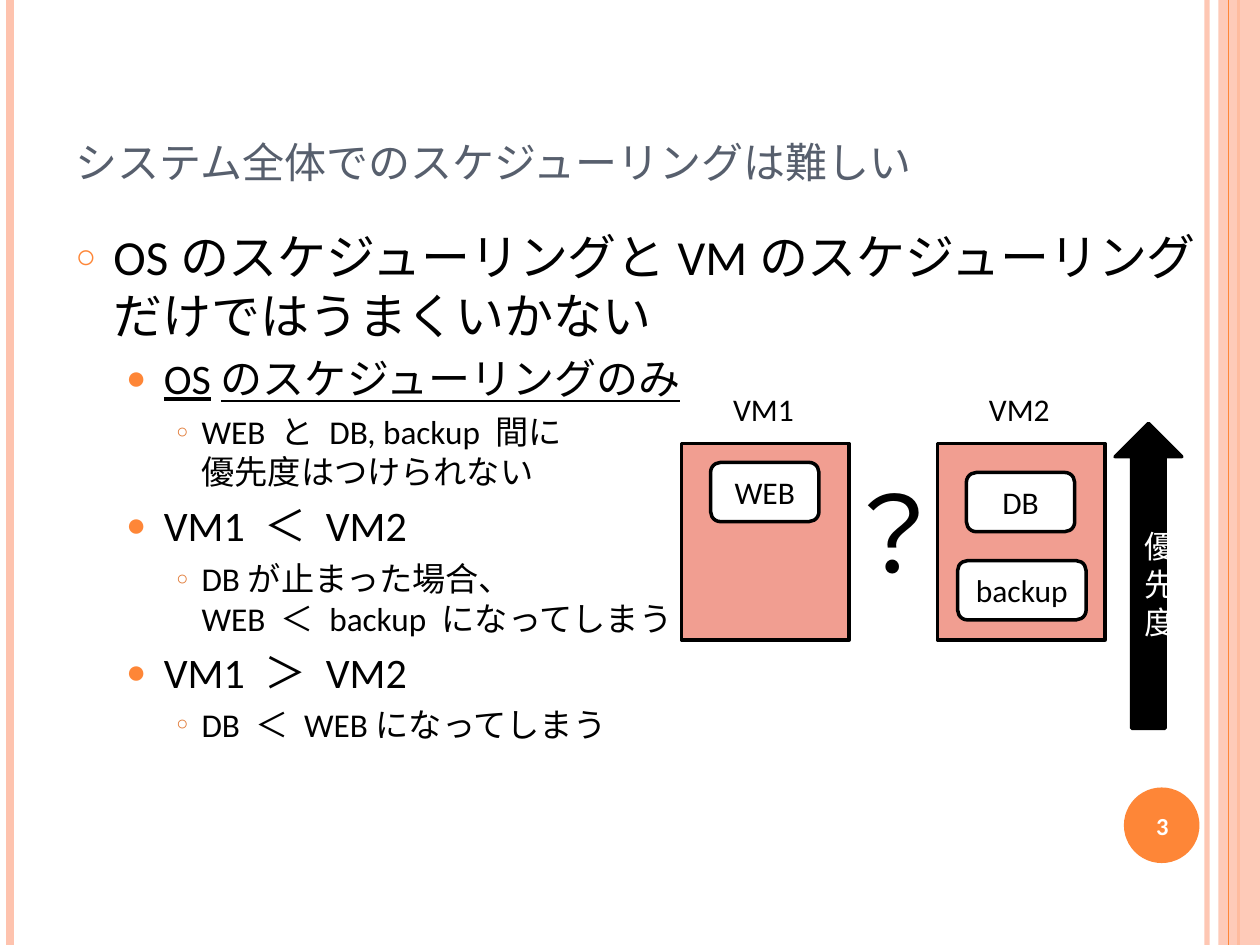
from dataclasses import dataclass

from lxml import etree
from pptx import Presentation
from pptx import util as u
from pptx.dml import color
from pptx.enum import shapes, text
from pptx.oxml import ns

LATIN, JAPANESE = "Calibri", "Noto Sans CJK JP"
ORANGE, PEACH, SALMON = "FE8637", "FEC3AE", "F19E91"
BLACK, WHITE = "000000", "FFFFFF"
SHAPE = shapes.MSO_SHAPE


@dataclass
class Stripe:
    x: float
    colour: str
    width: float
    opacity: int = 100


@dataclass
class Level:
    size: float
    margin: float
    indent: float
    bullet: str
    bullet_colour: str
    bullet_percent: int


@dataclass
class Item:
    level: int
    wording: str
    underline: bool = False


@dataclass
class Process:
    name: str
    offset_x: float
    offset_y: float
    width: float


@dataclass
class Machine:
    name: str
    x: float
    label_x: float
    label_width: float
    processes: list[Process]


STRIPES = [Stripe(9.58, PEACH, 3, 93), Stripe(0.08, PEACH, 4.5), Stripe(9.83, ORANGE, 1.5)]
LEVELS = [
    Level(28, 0.3, -0.3, "○", ORANGE, 70),
    Level(24, 0.7, -0.3, "●", ORANGE, 80),
    Level(19, 1, -0.2, "○", "E07631", 60),
]
ITEMS = [
    Item(0, "OSのスケジューリングとVMのスケジューリングだけではうまくいかない"),
    Item(1, "OSのスケジューリングのみ", underline=True),
    Item(2, "WEB と DB, backup 間に\n優先度はつけられない"),
    Item(1, "VM1 ＜ VM2"),
    Item(2, "DBが止まった場合、\nWEB ＜ backup になってしまう"),
    Item(1, "VM1 ＞ VM2"),
    Item(2, "DB ＜ WEBになってしまう"),
]
MACHINES = [
    Machine("VM2", 7.44, 7.75, 0.78,
            [Process("DB", 0.23, 0.23, 0.86), Process("backup", 0.16, 0.93, 1.02)]),
    Machine("VM1", 5.41, 5.72, 0.86, [Process("WEB", 0.23, 0.15, 0.86)]),
]
MACHINE_TOP = 3.52


def paint(fill, colour: str, opacity: int = 100) -> None:
    fill.solid()
    fill.fore_color.rgb = color.RGBColor.from_string(colour)
    if opacity < 100:
        tint = fill._xPr.find(".//" + ns.qn("a:srgbClr"))
        etree.SubElement(tint, ns.qn("a:alpha"), val=str(opacity * 1000))


def place(item, x: float, y: float, width: float, height: float) -> None:
    item.left, item.top = u.Inches(x), u.Inches(y)
    item.width, item.height = u.Inches(width), u.Inches(height)


def add_span(para, wording: str, size: float, colour: str = BLACK, font: str = LATIN):
    span = para.add_run()
    span.text = wording
    span.font.size = u.Pt(size)
    span.font.name = font
    paint(span.font.fill, colour)
    etree.SubElement(span.font._element, ns.qn("a:ea"), typeface=JAPANESE)
    return span


def add_stripe(page, stripe: Stripe) -> None:
    x = u.Inches(stripe.x)
    line = page.shapes.add_connector(shapes.MSO_CONNECTOR.STRAIGHT, x, 0, x, u.Inches(7.5))
    paint(line.line.fill, stripe.colour, stripe.opacity)
    line.line.width = u.Pt(stripe.width)
    etree.SubElement(line._element.spPr, ns.qn("a:effectLst"))


def add_box(page, kind, x: float, y: float, width: float, height: float,
            fill: str, opacity: int = 100, outlined: bool = True):
    box = page.shapes.add_shape(kind, *map(u.Inches, (x, y, width, height)))
    box.shadow.inherit = False
    paint(box.fill, fill, opacity)
    if outlined:
        paint(box.line.fill, BLACK)
        box.line.width = u.Pt(2)
    else:
        box.line.fill.background()
    return box


def centre_text(box, wording: str, size: float = 18, colour: str = BLACK):
    box.text_frame.word_wrap = True
    box.text_frame.vertical_anchor = text.MSO_ANCHOR.MIDDLE
    para = box.text_frame.paragraphs[0]
    para.alignment = text.PP_ALIGN.CENTER
    return add_span(para, wording, size, colour)


def add_label(page, wording: str, x: float, y: float, width: float, height: float,
              size: float = 18, font: str = LATIN) -> None:
    box = page.shapes.add_textbox(*map(u.Inches, (x, y, width, height)))
    box.text_frame.word_wrap = True
    box.text_frame.auto_size = text.MSO_AUTO_SIZE.SHAPE_TO_FIT_TEXT
    add_span(box.text_frame.paragraphs[0], wording, size, font=font)


def add_item(para, item: Item) -> None:
    level = LEVELS[item.level]
    para.level = item.level
    if item.level == 0:
        para.space_before = u.Pt(6)
    props = para._p.get_or_add_pPr()
    props.set("marL", str(u.Inches(level.margin)))
    props.set("indent", str(u.Inches(level.indent)))
    tint = etree.SubElement(props, ns.qn("a:buClr"))
    etree.SubElement(tint, ns.qn("a:srgbClr"), val=level.bullet_colour)
    etree.SubElement(props, ns.qn("a:buSzPct"), val=str(level.bullet_percent * 1000))
    etree.SubElement(props, ns.qn("a:buChar"), char=level.bullet)
    for number, row in enumerate(item.wording.split("\n")):
        if number:
            para.add_line_break()
        add_span(para, row, level.size).font.underline = item.underline


def add_machine(page, machine: Machine) -> None:
    add_box(page, SHAPE.RECTANGLE, machine.x, MACHINE_TOP, 1.33, 1.56, SALMON)
    for process in machine.processes:
        box = add_box(page, SHAPE.ROUNDED_RECTANGLE, machine.x + process.offset_x,
                      MACHINE_TOP + process.offset_y, process.width, 0.47, WHITE)
        centre_text(box, process.name)
    add_label(page, machine.name, machine.label_x, 3.05, machine.label_width, 0.4)


def main() -> None:
    deck = Presentation()
    deck.slide_width, deck.slide_height = u.Inches(10), u.Inches(7.5)
    page = deck.slides.add_slide(deck.slide_layouts[1])

    for stripe in STRIPES:
        add_stripe(page, stripe)
    add_box(page, SHAPE.RECTANGLE, 9.67, 0, 0.33, 7.5, PEACH, 87, outlined=False)
    add_stripe(page, Stripe(9.75, ORANGE, 0.75))
    add_box(page, SHAPE.OVAL, 8.92, 6.25, 0.6, 0.6, ORANGE, outlined=False)

    title = page.shapes.title
    place(title, 0.5, 0.3, 8.17, 1.25)
    title.text_frame.auto_size = text.MSO_AUTO_SIZE.NONE
    title.text_frame.vertical_anchor = text.MSO_ANCHOR.BOTTOM
    para = title.text_frame.paragraphs[0]
    para.alignment = text.PP_ALIGN.LEFT
    span = add_span(para, "システム全体でのスケジューリングは難しい", 30, "575F6D")
    span.font._element.set("cap", "small")

    body = page.placeholders[1]
    place(body, 0.5, 1.75, 9.19, 5.59)
    frame = body.text_frame
    frame.auto_size = text.MSO_AUTO_SIZE.NONE
    for number, item in enumerate(ITEMS):
        add_item(frame.add_paragraph() if number else frame.paragraphs[0], item)

    for machine in MACHINES:
        add_machine(page, machine)
    arrow = add_box(page, SHAPE.UP_ARROW, 8.85, 3.36, 0.53, 2.42, BLACK)
    centre_text(arrow, "優先度", colour=WHITE)
    add_label(page, "？", 6.58, 3.67, 1.17, 1.11, 60, JAPANESE)

    page_number = page.shapes.add_textbox(*map(u.Inches, (8.89, 6.27, 0.67, 0.57)))
    centre_text(page_number, "3", 14, WHITE).font.bold = True

    deck.save("out.pptx")


if __name__ == "__main__":
    main()
